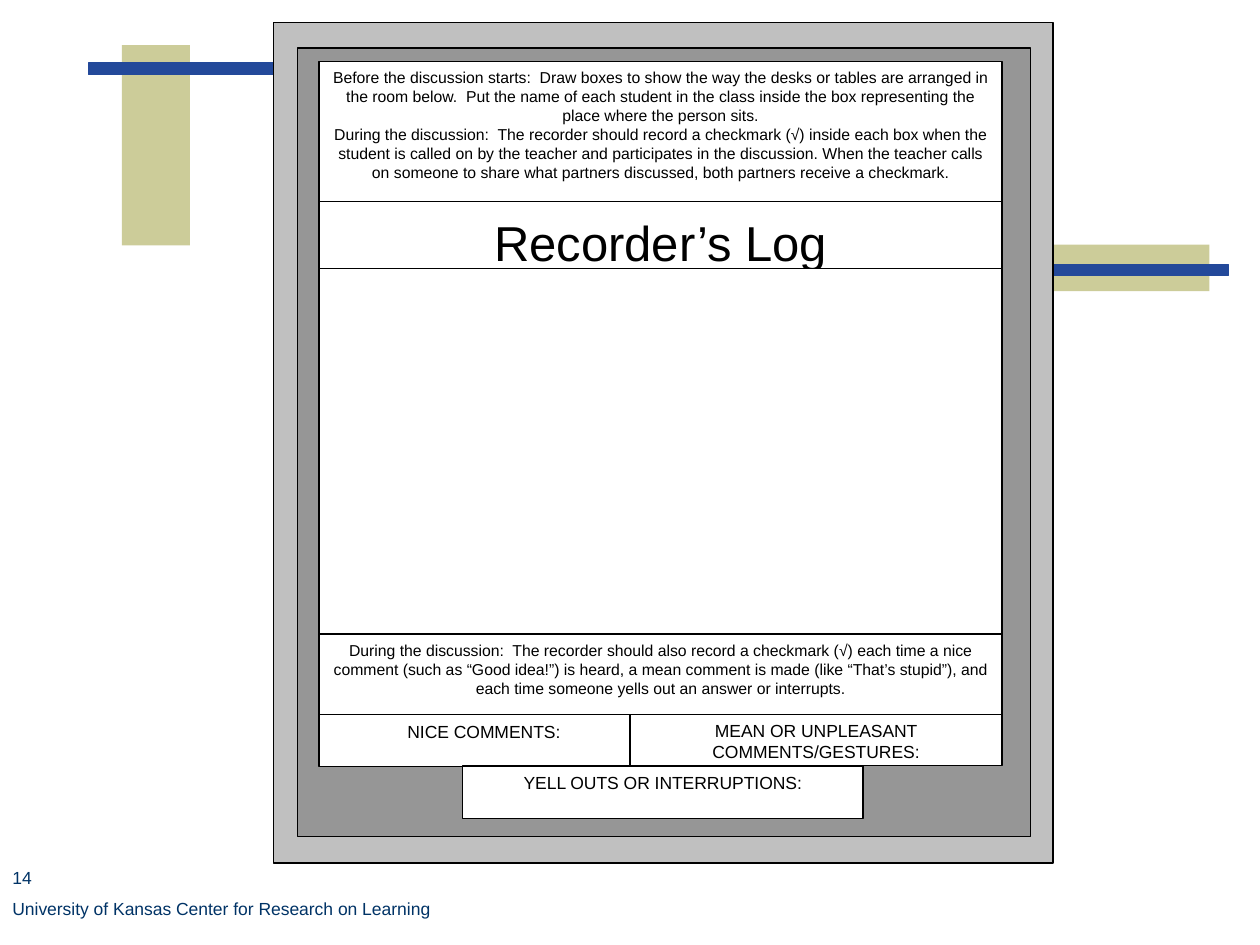
from dataclasses import dataclass
from pptx import Presentation
from pptx.dml.color import RGBColor
from pptx.enum.shapes import MSO_SHAPE
from pptx.enum.text import MSO_ANCHOR, PP_ALIGN
from pptx.util import Cm, Pt


@dataclass(frozen=True)
class Theme:
    font: str = "Arial"
    black: str = "000000"
    white: str = "FFFFFF"
    navy: str = "003366"
    blue: str = "23499A"
    sand: str = "CCCC99"
    pale: str = "C0C0C0"
    gray: str = "969696"
    note: int = 9
    label: int = 10
    title: int = 28


look = Theme()
deck = Presentation()
deck.slide_width, deck.slide_height = Cm(25.4), Cm(19.05)
slide = deck.slides.add_slide(deck.slide_layouts[6])


def box(left, top, width, height, fill=look.white, line=look.black):
    shape = slide.shapes.add_shape(
        MSO_SHAPE.RECTANGLE, Cm(left), Cm(top), Cm(width), Cm(height))
    shape.shadow.inherit = False
    shape.fill.solid()
    shape.fill.fore_color.rgb = RGBColor.from_string(fill)
    if line:
        shape.line.color.rgb = RGBColor.from_string(line)
        shape.line.width = Pt(0.75)
    else:
        shape.line.fill.background()
    return shape


def write(shape, *lines, size=look.label, color=look.black,
          align=PP_ALIGN.CENTER, inset=0.13):
    frame = shape.text_frame
    frame.word_wrap = True
    frame.vertical_anchor = MSO_ANCHOR.TOP
    frame.margin_left = frame.margin_right = Cm(0.25)
    frame.margin_top, frame.margin_bottom = Cm(inset), Cm(0)
    for i, line in enumerate(lines):
        para = frame.paragraphs[0] if i == 0 else frame.add_paragraph()
        para.alignment = align
        run = para.add_run()
        run.text = line
        run.font.name = look.font
        run.font.size = Pt(size)
        run.font.color.rgb = RGBColor.from_string(color)


# Backdrop: a sand block crossed by a blue bar on each side
box(2.46, 0.91, 1.37, 4.04, look.sand, None)
box(1.78, 1.27, 15.72, 0.23, look.blue, look.blue)
box(20.29, 4.93, 4.09, 0.94, look.sand, None)
box(9.04, 5.33, 15.72, 0.23, look.blue, look.blue)

# Page number and footer
for top, width, text in (
    (17.35, 5.28, "14"),
    (17.98, 10.59, "University of Kansas Center for Research on Learning"),
):
    foot = slide.shapes.add_textbox(Cm(0), Cm(top), Cm(width), Cm(0.64))
    write(foot, text, color=look.navy, align=PP_ALIGN.LEFT)

# Double frame of the log sheet
box(5.51, 0.46, 15.72, 16.94, look.pale)
box(6.0, 0.97, 14.78, 15.9, look.gray)

# Full-width rows of the sheet
left, wide = 6.43, 13.77
write(
    box(left, 1.24, wide, 3.35),
    "Before the discussion starts:  Draw boxes to show the way the desks or "
    "tables are arranged in the room below.  Put the name of each student in "
    "the class inside the box representing the place where the person sits.",
    "During the discussion:  The recorder should record a checkmark (√) inside "
    "each box when the student is called on by the teacher and participates in "
    "the discussion. When the teacher calls on someone to share what partners "
    "discussed, both partners receive a checkmark.",
    size=look.note)
write(box(left, 4.06, wide, 1.35), "Recorder’s Log",
      size=look.title, inset=0.23)

# Tally boxes
for start, top, width, text in (
    (left, 14.4, 6.65, "NICE COMMENTS:"),
    (9.32, 15.44, 8.08, "YELL OUTS OR INTERRUPTIONS:"),
    (12.7, 14.38, 7.5, "MEAN OR UNPLEASANT COMMENTS/GESTURES:"),
):
    write(box(start, top, width, 1.06), text)

# Seating area and the note below it
box(left, 5.41, wide, 8.99)
write(
    box(left, 12.78, wide, 1.62),
    "During the discussion:  The recorder should also record a checkmark (√) "
    "each time a nice comment (such as “Good idea!”) is heard, a mean comment "
    "is made (like “That’s stupid”), and each time someone yells out an answer "
    "or interrupts.",
    size=look.note)

deck.save("out.pptx")
